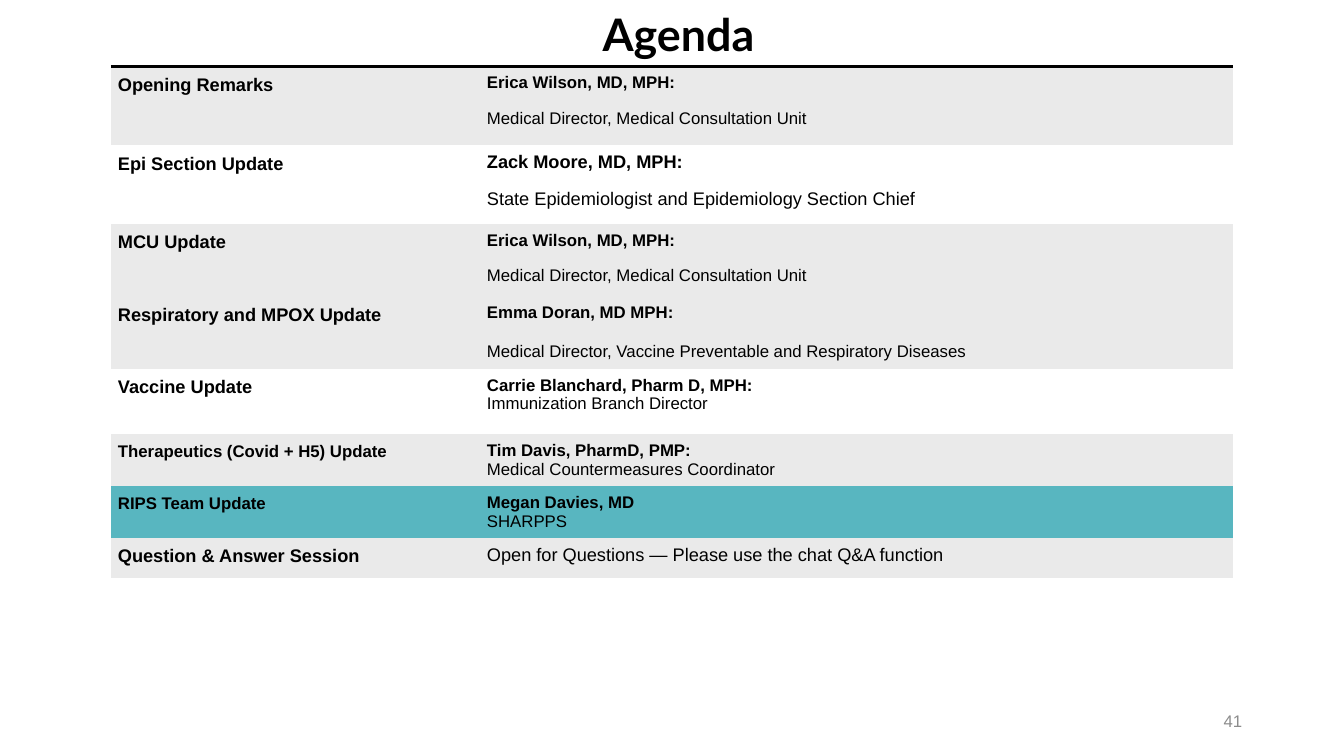
from lxml.etree import SubElement
from pptx import Presentation
from pptx.dml.color import RGBColor
from pptx.enum.text import MSO_ANCHOR, MSO_AUTO_SIZE, PP_ALIGN
from pptx.oxml.ns import qn
from pptx.util import Inches, Pt

BLACK = RGBColor(0x00, 0x00, 0x00)
GREY = RGBColor(0x8C, 0x8C, 0x8C)
BAND = RGBColor(0xEA, 0xEA, 0xEA)
TEAL = RGBColor(0x58, 0xB6, 0xC0)

NO_STYLE_NO_GRID = "{2D5ABB26-0587-4C30-8999-92F81FD0307C}"
COLUMN_WIDTHS = (3.66, 7.47)

# height, fill, topic, topic size, speaker, role, speaker size, gap between them
AGENDA = [
    (0.78, BAND, "Opening Remarks", 13, "Erica Wilson, MD, MPH:",
     "Medical Director, Medical Consultation Unit", 12, 12),
    (0.78, None, "Epi Section Update", 13, "Zack Moore, MD, MPH:",
     "State Epidemiologist and Epidemiology Section Chief", 13, 12),
    (0.72, BAND, "MCU Update", 13, "Erica Wilson, MD, MPH:",
     "Medical Director, Medical Consultation Unit", 12, 12),
    (0.72, BAND, "Respiratory and MPOX Update", 13, "Emma Doran, MD MPH:",
     "Medical Director, Vaccine Preventable and Respiratory Diseases", 12, 14),
    (0.65, None, "Vaccine Update", 13, "Carrie Blanchard, Pharm D, MPH:",
     "Immunization Branch Director", 12, 0),
    (0.51, BAND, "Therapeutics (Covid + H5) Update", 12, "Tim Davis, PharmD, PMP:",
     "Medical Countermeasures Coordinator", 12, 0),
    (0.51, TEAL, "RIPS Team Update", 12, "Megan Davies, MD", "SHARPPS", 12, 0),
    (0.4, BAND, "Question & Answer Session", 13, None,
     "Open for Questions — Please use the chat Q&A function", 13, 0),
]


def set_font(p, size, bold=False, color=BLACK, name="Arial"):
    p.font.name = name
    p.font.size = Pt(size)
    p.font.bold = bold
    p.font.color.rgb = color


def add_title(s, text):
    title = s.shapes.title
    title.left, title.top = Inches(5.87), Inches(0.02)
    title.width, title.height = Inches(1.72), Inches(0.64)
    tf = title.text_frame
    tf.text = text
    tf.word_wrap = False
    tf.auto_size = MSO_AUTO_SIZE.NONE
    tf.vertical_anchor = MSO_ANCHOR.TOP
    p = tf.paragraphs[0]
    p.alignment = PP_ALIGN.CENTER
    set_font(p, 32, True, name="Lato")


def add_page_number(s, number):
    tf = s.shapes.add_textbox(Inches(9.42), Inches(6.95), Inches(3), Inches(0.4)).text_frame
    tf.word_wrap = True
    tf.vertical_anchor = MSO_ANCHOR.MIDDLE
    p = tf.paragraphs[0]
    p.text = number
    p.alignment = PP_ALIGN.RIGHT
    p.space_after = Pt(6)
    set_font(p, 12, color=GREY)


def format_cell(cell, fill):
    cell.margin_left = cell.margin_right = Inches(0.07)
    cell.margin_top = cell.margin_bottom = Inches(0.07)
    if fill is None:
        cell.fill.background()
    else:
        cell.fill.solid()
        cell.fill.fore_color.rgb = fill


def add_top_border(cell, width, color):
    tcPr = cell._tc.get_or_add_tcPr()
    line = SubElement(tcPr, qn("a:lnT"), w=str(Pt(width)))
    fill = SubElement(line, qn("a:solidFill"))
    SubElement(fill, qn("a:srgbClr"), val=str(color))
    tcPr.insert(0, line)


def fill_topic(cell, topic, size):
    p = cell.text_frame.paragraphs[0]
    p.text = topic
    p.line_spacing = 1.07
    set_font(p, size, True)


def fill_speaker(cell, speaker, role, size, gap):
    tf = cell.text_frame
    p = tf.paragraphs[0]
    if speaker:
        p.text = speaker
        set_font(p, size, True)
        p = tf.add_paragraph()
        p.space_before = Pt(gap)
    p.text = role
    set_font(p, size)


def add_agenda(s):
    frame = s.shapes.add_table(
        len(AGENDA), len(COLUMN_WIDTHS), Inches(1.1), Inches(0.66),
        Inches(sum(COLUMN_WIDTHS)), Inches(sum(item[0] for item in AGENDA)))
    table = frame.table
    table._tbl.tblPr.find(qn("a:tableStyleId")).text = NO_STYLE_NO_GRID
    table.first_row = table.horz_banding = False
    for column, width in zip(table.columns, COLUMN_WIDTHS):
        column.width = Inches(width)
    for row, (height, fill, topic, topic_size, *speaker) in zip(table.rows, AGENDA):
        row.height = Inches(height)
        for cell in row.cells:
            format_cell(cell, fill)
        fill_topic(row.cells[0], topic, topic_size)
        fill_speaker(row.cells[1], *speaker)
    for cell in table.rows[0].cells:
        add_top_border(cell, 2.25, BLACK)


def main():
    prs = Presentation()
    prs.slide_width, prs.slide_height = Inches(13.33), Inches(7.5)
    s = prs.slides.add_slide(prs.slide_layouts[5])
    add_title(s, "Agenda")
    add_agenda(s)
    add_page_number(s, "41")
    prs.save("out.pptx")


if __name__ == "__main__":
    main()
